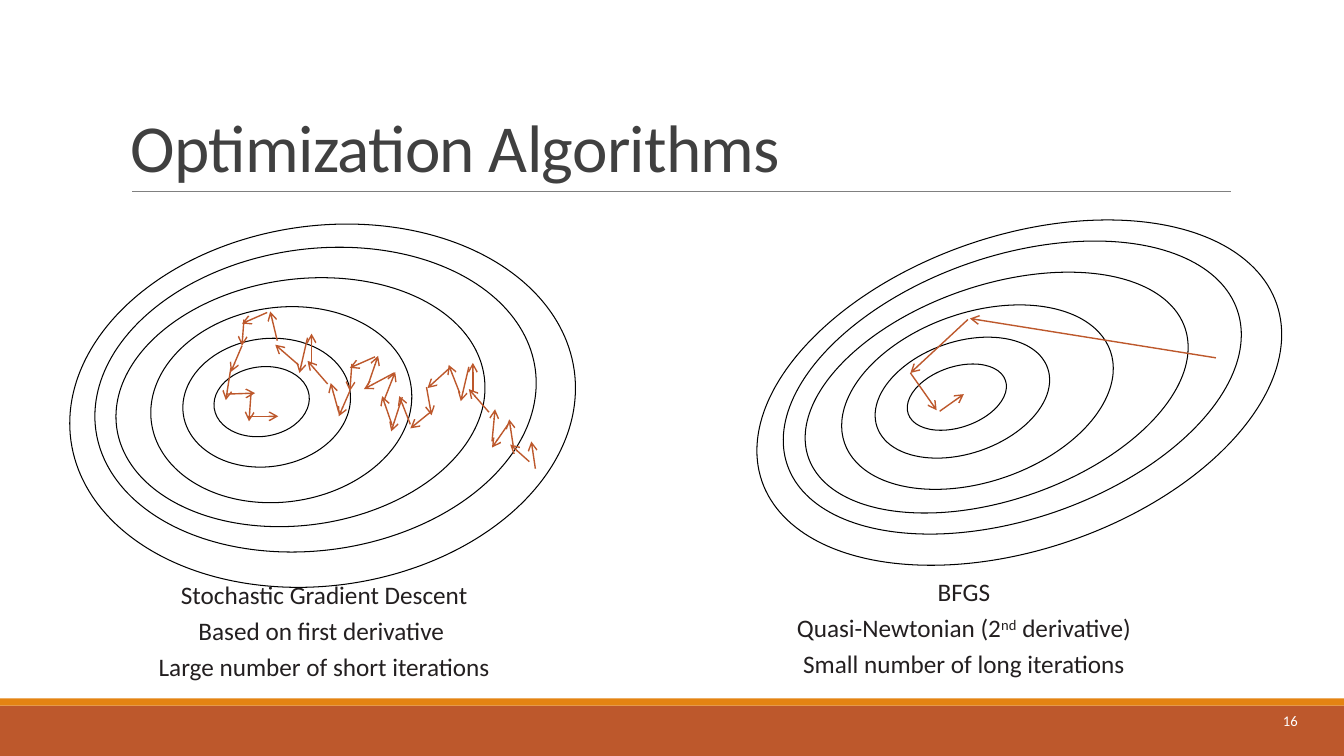
"""Build a slide that contrasts the paths of two descent methods."""
from dataclasses import dataclass

from lxml.etree import SubElement
from pptx import Presentation
from pptx.dml.color import RGBColor as Rgb
from pptx.enum.shapes import MSO_CONNECTOR as Conn, MSO_SHAPE as Form
from pptx.enum.text import MSO_ANCHOR as Anchor, MSO_AUTO_SIZE as Fit, PP_ALIGN as Align
from pptx.oxml.ns import qn
from pptx.util import Inches, Pt

RUST, GOLD, INK, BLACK = "BD582C", "E48312", "231F20", "000000"
Box = tuple[float, float, float, float]


@dataclass
class Plot:
    tilt: int
    rings: list[Box]
    steps: list[Box]


@dataclass
class Run:
    text: str
    raised: bool = False


@dataclass
class Note:
    box: Box
    lines: list[list[Run]]
    size: float
    tint: str
    align: Align = Align.LEFT
    anchor: Anchor = Anchor.TOP
    inset: tuple[float, float] = (0.1, 0.05)
    wrap: bool = True
    grow: bool = False
    pitch: float = 1.0
    before: float = 0
    track: int = 0


SGD = Plot(
    352,
    [(0.68, 2.24, 5.04, 3.57), (0.93, 2.47, 4.4, 2.99), (1.14, 2.77, 3.68, 2.44),
     (1.49, 3.05, 2.6, 1.93), (1.81, 3.36, 1.67, 1.27), (2.12, 3.64, 0.95, 0.69)],
    [(5.31, 4.65, 5.27, 4.38), (5.25, 4.58, 5.06, 4.41), (5.09, 4.42, 5.05, 4.16),
     (5.04, 4.21, 4.88, 4.44), (4.88, 4.38, 4.91, 4.06), (4.85, 4.09, 4.65, 3.86),
     (4.69, 3.89, 4.69, 3.6), (4.65, 3.64, 4.57, 3.98), (4.56, 3.9, 4.45, 3.62),
     (4.45, 3.66, 4.24, 3.85), (4.23, 3.84, 4.28, 4.12), (4.28, 4.08, 4.07, 4.25),
     (4.07, 4.21, 3.96, 3.93), (3.99, 3.94, 3.88, 4.28), (3.89, 4.22, 3.79, 3.93),
     (3.81, 3.97, 3.92, 3.69), (3.91, 3.7, 3.61, 3.86), (3.65, 3.82, 3.75, 3.53),
     (3.72, 3.54, 3.47, 3.65), (3.49, 3.61, 3.47, 3.88), (3.47, 3.88, 3.36, 4.13),
     (3.36, 4.09, 3.28, 3.8), (3.25, 3.81, 3.05, 3.58), (3.09, 3.61, 3.09, 3.31),
     (3.05, 3.35, 2.97, 3.7), (2.96, 3.62, 2.73, 3.42), (2.75, 3.38, 2.68, 3.09),
     (2.65, 3.1, 2.4, 3.21), (2.42, 3.17, 2.4, 3.43), (2.4, 3.43, 2.29, 3.69),
     (2.29, 3.65, 2.24, 3.97), (2.24, 3.91, 2.53, 3.9), (2.49, 3.9, 2.47, 4.18),
     (2.46, 4.13, 2.76, 4.13)],
)
BFGS = Plot(
    341,
    [(7.41, 2.34, 5.4, 3.11), (7.68, 2.54, 4.72, 2.61), (7.91, 2.83, 3.95, 2.13),
     (8.3, 3.1, 2.79, 1.68), (8.65, 3.39, 1.79, 1.11), (8.98, 3.64, 1.02, 0.6)],
    [(12.06, 3.55, 9.62, 3.16), (9.6, 3.17, 9.03, 3.7), (9.03, 3.7, 9.29, 4.07),
     (9.32, 4.08, 9.56, 3.91)],
)


def label(box: Box, lines: list[list[Run]], wrap: bool) -> Note:
    return Note(box, lines, 18, INK, Align.CENTER, inset=(0.13, 0.07),
                wrap=wrap, grow=True, pitch=0.95, before=5.3)


NOTES = [
    Note((1.2, 0.31, 11, 1.59), [[Run("Optimization Algorithms")]], 48, "404040",
         anchor=Anchor.BOTTOM, pitch=0.85, track=-50),
    Note((11.92, 6.95, 1.05, 0.4), [[Run("16")]], 10.5, "FFFFFF", Align.RIGHT, Anchor.MIDDLE),
    label((1.41, 5.7, 3.61, 1.15),
          [[Run("Stochastic Gradient Descent")], [Run("Based on first derivative ")],
           [Run("Large number of short iterations")]], False),
    label((6.54, 5.67, 6.04, 1.15),
          [[Run("BFGS")],
           [Run("Quasi-Newtonian (2"), Run("nd", True), Run(" derivative)")],
           [Run("Small number of long iterations")]], True),
]


def shade(code: str) -> Rgb:
    return Rgb.from_string(code)


def add_bar(shapes, box: Box, tint: str) -> None:
    bar = shapes.add_shape(Form.RECTANGLE, *map(Inches, box))
    bar.shadow.inherit = False
    bar.fill.solid()
    bar.fill.fore_color.rgb = shade(tint)
    bar.line.fill.background()


def add_ring(shapes, box: Box, tilt: int) -> None:
    ring = shapes.add_shape(Form.OVAL, *map(Inches, box))
    ring.shadow.inherit = False
    ring.rotation = tilt
    ring.fill.background()
    ring.line.color.rgb = shade(BLACK)
    ring.line.width = Pt(0.75)


def add_line(shapes, ends: Box, tint: str, width: float, arrow: bool = False) -> None:
    line = shapes.add_connector(Conn.STRAIGHT, *map(Inches, ends))
    line.line.color.rgb = shade(tint)
    line.line.width = Pt(width)
    if arrow:
        SubElement(line.line._get_or_add_ln(), qn("a:tailEnd"), type="arrow")
    SubElement(line._element.spPr, qn("a:effectLst"))


def add_plot(shapes, plot: Plot) -> None:
    group = shapes.add_group_shape().shapes
    for ring in plot.rings:
        add_ring(group, ring, plot.tilt)
    for step in plot.steps:
        add_line(group, step, RUST, 1, True)


def add_note(shapes, note: Note) -> None:
    frame = shapes.add_textbox(*map(Inches, note.box)).text_frame
    frame.word_wrap = note.wrap
    frame.auto_size = Fit.SHAPE_TO_FIT_TEXT if note.grow else Fit.NONE
    frame.vertical_anchor = note.anchor
    frame.margin_left = frame.margin_right = Inches(note.inset[0])
    frame.margin_top = frame.margin_bottom = Inches(note.inset[1])
    for i, line in enumerate(note.lines):
        para = frame.add_paragraph() if i else frame.paragraphs[0]
        para.alignment = note.align
        para.line_spacing = note.pitch
        para.space_before = Pt(note.before)
        for part in line:
            run = para.add_run()
            run.text = part.text
            run.font.name = "Calibri"
            run.font.size = Pt(note.size)
            run.font.color.rgb = shade(note.tint)
            props = run.font._element
            if note.track:
                props.set("spc", str(note.track))
            if part.raised:
                props.set("baseline", "30000")


def main() -> None:
    deck = Presentation()
    deck.slide_width, deck.slide_height = Inches(13.33), Inches(7.5)
    shapes = deck.slides.add_slide(deck.slide_layouts[6]).shapes
    add_bar(shapes, (0, 7, 13.33, 0.5), RUST)
    add_bar(shapes, (0, 6.93, 13.33, 0.07), GOLD)
    add_line(shapes, (1.31, 1.9, 12.21, 1.9), "808080", 0.5)
    for plot in (BFGS, SGD):
        add_plot(shapes, plot)
    for note in NOTES:
        add_note(shapes, note)
    deck.save("out.pptx")


if __name__ == "__main__":
    main()
